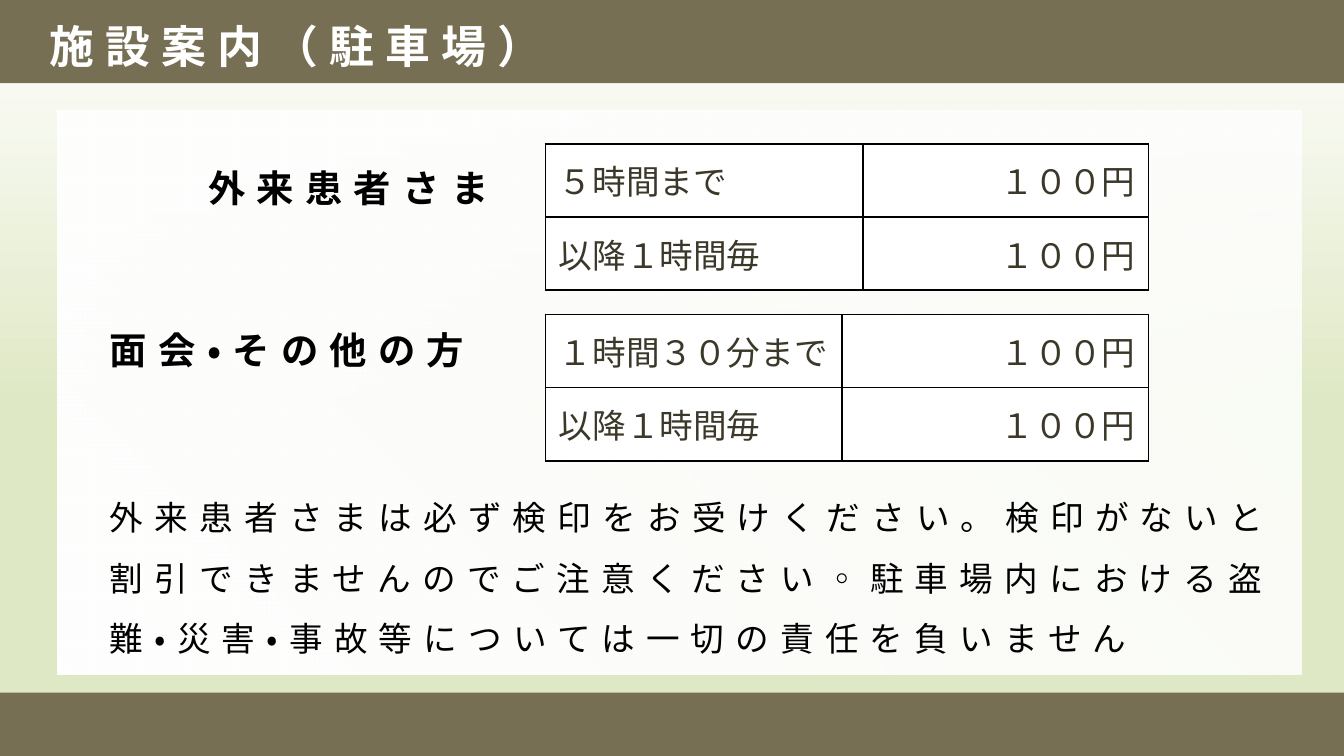
from lxml import etree
from pptx import Presentation
from pptx import util as u
from pptx.dml.color import RGBColor
from pptx.enum import shapes, text
from pptx.oxml import parse_xml
from pptx.oxml.ns import nsdecls, qn

Pt = u.Pt
WHITE = RGBColor(0xFF, 0xFF, 0xFF)
BLACK = RGBColor(0, 0, 0)
OLIVE = RGBColor(0x76, 0x6F, 0x54)
PALE_GREEN = RGBColor(0xDF, 0xE8, 0xC4)
DARK = RGBColor(0x3B, 0x38, 0x2A)

PANEL_FILL = f"""<a:gradFill {nsdecls("a")} rotWithShape="1"><a:gsLst>
<a:gs pos="0"><a:srgbClr val="{WHITE}"/></a:gs>
<a:gs pos="100000"><a:srgbClr val="{WHITE}"><a:alpha val="80000"/></a:srgbClr></a:gs>
</a:gsLst><a:path path="circle"><a:fillToRect t="100000" r="100000"/></a:path></a:gradFill>"""


def set_background(s):
    fill = s.background.fill
    fill.gradient()
    fill.gradient_angle = 270
    for stop, position, color in zip(fill.gradient_stops, (0, 0.54), (WHITE, PALE_GREEN)):
        stop.position = position
        stop.color.rgb = color


def add_rect(s, x, y, w, h, color=OLIVE):
    sp = s.shapes.add_shape(shapes.MSO_SHAPE.RECTANGLE, Pt(x), Pt(y), Pt(w), Pt(h))
    sp.shadow.inherit = False
    sp.line.fill.background()
    sp.fill.solid()
    sp.fill.fore_color.rgb = color
    return sp


def add_panel(s, x, y, w, h):
    sp = add_rect(s, x, y, w, h, WHITE)
    solid = sp._element.spPr.find(qn("a:solidFill"))
    solid.getparent().replace(solid, parse_xml(PANEL_FILL))


def write(p, words, size, name, color, bold=False, spacing=0):
    r = p.add_run()
    r.text = words
    rPr = r._r.get_or_add_rPr()
    rPr.set("lang", "ja-JP")
    if spacing:
        rPr.set("spc", str(spacing * 100))
    p.font.size = Pt(size)
    p.font.name = name
    p.font.bold = bold
    p.font.color.rgb = color


def add_text(s, x, y, w, h, words, size, name="Arial", color=BLACK, bold=True, leading=1.5):
    tf = s.shapes.add_textbox(Pt(x), Pt(y), Pt(w), Pt(h)).text_frame
    tf.word_wrap = True
    tf.auto_size = text.MSO_AUTO_SIZE.SHAPE_TO_FIT_TEXT
    p = tf.paragraphs[0]
    p.line_spacing = leading
    write(p, words, size, name, color, bold, spacing=6)


def set_borders(cell):
    tcPr = cell._tc.get_or_add_tcPr()
    for i, side in enumerate(("lnL", "lnR", "lnT", "lnB")):
        ln = etree.Element(qn(f"a:{side}"), w=str(Pt(1)))
        fill = etree.SubElement(ln, qn("a:solidFill"))
        etree.SubElement(fill, qn("a:srgbClr"), val=str(BLACK))
        tcPr.insert(i, ln)


def add_fee_table(s, y, widths, rows):
    row_height = 39.2
    table = s.shapes.add_table(len(rows), 2, Pt(292.2), Pt(y), Pt(sum(widths)),
                               Pt(row_height * len(rows))).table
    table.first_row = table.horz_banding = False
    for column, width in zip(table.columns, widths):
        column.width = Pt(width)
    for i, row in enumerate(rows):
        table.rows[i].height = Pt(row_height)
        for j, words in enumerate(row):
            cell = table.cell(i, j)
            cell.fill.solid()
            cell.fill.fore_color.rgb = WHITE
            cell.vertical_anchor = text.MSO_ANCHOR.MIDDLE
            p = cell.text_frame.paragraphs[0]
            p.alignment = (text.PP_ALIGN.LEFT, text.PP_ALIGN.RIGHT)[j]
            write(p, words, 18, "League Spartan", DARK)
            set_borders(cell)


def main():
    prs = Presentation()
    prs.slide_width, prs.slide_height = Pt(720), Pt(405)
    s = prs.slides.add_slide(prs.slide_layouts[6])
    set_background(s)
    add_rect(s, 0, 0, 720, 44.6)
    add_text(s, 19.4, 6.5, 584.6, 36, "施設案内（駐車場）", 24, "Noto Sans CJK JP", WHITE, leading=1)
    add_rect(s, 0, 371, 720, 34)
    add_panel(s, 31, 59, 666, 302.5)
    add_text(s, 104.4, 72.7, 181.4, 44, "外来患者さま", 20)
    add_text(s, 51.8, 159.8, 232.6, 44, "面会・その他の方", 20)
    hourly = ("以降１時間毎", "１００円")
    add_fee_table(s, 77, (170, 153.2), [("５時間まで", "１００円"), hourly])
    add_text(s, 51.8, 252, 652.3, 103,
             "外来患者さまは必ず検印をお受けください。検印がないと割引できませんのでご注意ください◦"
             "駐車場内における盗難・災害・事故等については一切の責任を負いません", 18, bold=False)
    add_fee_table(s, 168.5, (158.8, 164.4), [("１時間３０分まで", "１００円"), hourly])
    prs.save("out.pptx")


if __name__ == "__main__":
    main()
